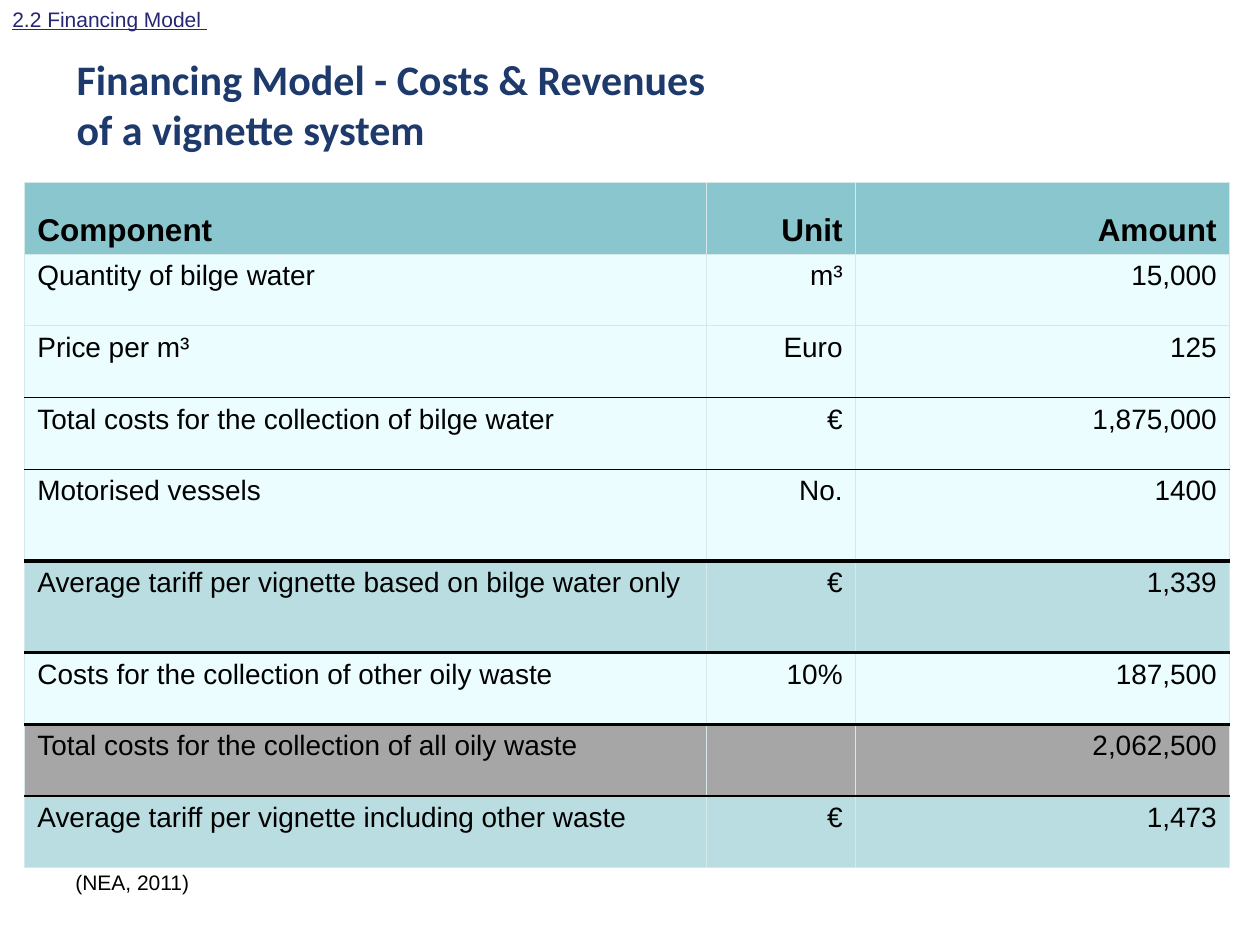
"""Build the slide on costs and revenues of a vignette system."""
from dataclasses import dataclass

from lxml import etree
from pptx import Presentation
from pptx.dml.color import RGBColor
from pptx.enum.text import MSO_ANCHOR, PP_ALIGN
from pptx.oxml.ns import qn
from pptx.util import Pt

LEFT, RIGHT = PP_ALIGN.LEFT, PP_ALIGN.RIGHT
TOP, MIDDLE, BOTTOM = MSO_ANCHOR.TOP, MSO_ANCHOR.MIDDLE, MSO_ANCHOR.BOTTOM
BLACK, PALE, HEADER, TARIFF, TOTAL, GRID = (
    "000000", "EBFDFF", "8AC6CD", "BADDE1", "A6A6A6", "D5E8EA")
GRID_WIDTH = 0.75
HANGING = 27
COLUMN_WIDTHS = (389.5, 85, 213.8)
ALIGNMENTS = (LEFT, RIGHT, RIGHT)


@dataclass
class CostRow:
    component: str
    unit: str
    amount: str
    fill: str = PALE
    rule_below: float = 0
    height: float = 41


@dataclass
class Caption:
    text: str
    box: tuple[float, float, float, float]
    font: dict
    anchor: MSO_ANCHOR = TOP


HEADING_FONT = {"name": "Arial", "size": Pt(18), "bold": True, "color": BLACK}
BODY_FONT = {"name": "Arial", "size": Pt(16), "bold": False, "color": BLACK}

ROWS = [
    CostRow("Component", "Unit", "Amount", HEADER),
    CostRow("Quantity of bilge water", "m³", "15,000"),
    CostRow("Price per m³", "Euro", "125", rule_below=1),
    CostRow("Total costs for the collection of bilge water", "€", "1,875,000", rule_below=1),
    CostRow("Motorised vessels", "No.", "1400", rule_below=2.25, height=52.4),
    CostRow("Average tariff per vignette based on bilge water only", "€", "1,339",
            TARIFF, 2.25, 52.4),
    CostRow("Costs for the collection of other oily waste", "10%", "187,500", rule_below=2.25),
    CostRow("Total costs for the collection of all oily waste", "", "2,062,500", TOTAL, 1),
    CostRow("Average tariff per vignette including other waste", "€", "1,473", TARIFF),
]

CAPTIONS = [
    Caption("Financing Model - Costs & Revenues\vof a vignette system", (36.7, 14.4, 648, 90),
            {"name": "Calibri", "size": Pt(24), "bold": True, "color": "1E3A6C"}, MIDDLE),
    Caption("(NEA, 2011)", (36, 493.2, 127.4, 21.6),
            {"name": "Arial", "size": Pt(12), "color": BLACK}),
    Caption("2.2 Financing Model ", (0, 0, 256.3, 21.6),
            {"name": "Arial", "size": Pt(12), "underline": True, "color": "262673"}),
]


def rgb(code: str) -> RGBColor:
    """Turn a hex string into a colour."""
    return RGBColor.from_string(code)


def write(paragraph, text: str, font: dict) -> None:
    """Fill a paragraph and format its runs."""
    paragraph.text = text
    for run in paragraph.runs:
        for key, value in font.items():
            if key == "color":
                run.font.color.rgb = rgb(value)
            else:
                setattr(run.font, key, value)


def add_caption(slide, caption: Caption) -> None:
    """Place one text box."""
    frame = slide.shapes.add_textbox(*map(Pt, caption.box)).text_frame
    frame.word_wrap = True
    frame.vertical_anchor = caption.anchor
    write(frame.paragraphs[0], caption.text, caption.font)


def set_borders(cell, rule_above: float, rule_below: float) -> None:
    """Draw the pale grid, with black rules where a width is given."""
    properties = cell._tc.get_or_add_tcPr()
    sides = {"a:lnL": 0, "a:lnR": 0, "a:lnT": rule_above, "a:lnB": rule_below}
    for position, (tag, rule) in enumerate(sides.items()):
        line = etree.Element(qn(tag), w=str(Pt(rule or GRID_WIDTH)))
        fill = etree.SubElement(line, qn("a:solidFill"))
        etree.SubElement(fill, qn("a:srgbClr"), val=BLACK if rule else GRID)
        properties.insert(position, line)


def add_cost_table(slide, rows: list[CostRow]) -> None:
    """Add the table of costs, units and amounts."""
    height = sum(row.height for row in rows)
    table = slide.shapes.add_table(
        len(rows), len(COLUMN_WIDTHS), Pt(14.2), Pt(104.2),
        Pt(sum(COLUMN_WIDTHS)), Pt(height)).table
    table.first_row = table.horz_banding = False
    for column, width in zip(table.columns, COLUMN_WIDTHS):
        column.width = Pt(width)
    rule_above = 0
    for index, (cost, table_row) in enumerate(zip(rows, table.rows)):
        table_row.height = Pt(cost.height)
        texts = (cost.component, cost.unit, cost.amount)
        for cell, text, alignment in zip(table_row.cells, texts, ALIGNMENTS):
            cell.fill.solid()
            cell.fill.fore_color.rgb = rgb(cost.fill)
            cell.vertical_anchor = TOP if index else BOTTOM
            set_borders(cell, rule_above, cost.rule_below)
            paragraph = cell.text_frame.paragraphs[0]
            write(paragraph, text, BODY_FONT if index else HEADING_FONT)
            paragraph.alignment = alignment
            indents = paragraph._p.get_or_add_pPr()
            indents.set("marL", str(Pt(HANGING)))
            indents.set("indent", str(-Pt(HANGING)))
        rule_above = cost.rule_below


def main() -> None:
    """Build and save the slide."""
    presentation = Presentation()
    presentation.slide_width, presentation.slide_height = Pt(720), Pt(540)
    slide = presentation.slides.add_slide(presentation.slide_layouts[6])
    add_cost_table(slide, ROWS)
    for caption in CAPTIONS:
        add_caption(slide, caption)
    presentation.save("out.pptx")


if __name__ == "__main__":
    main()
